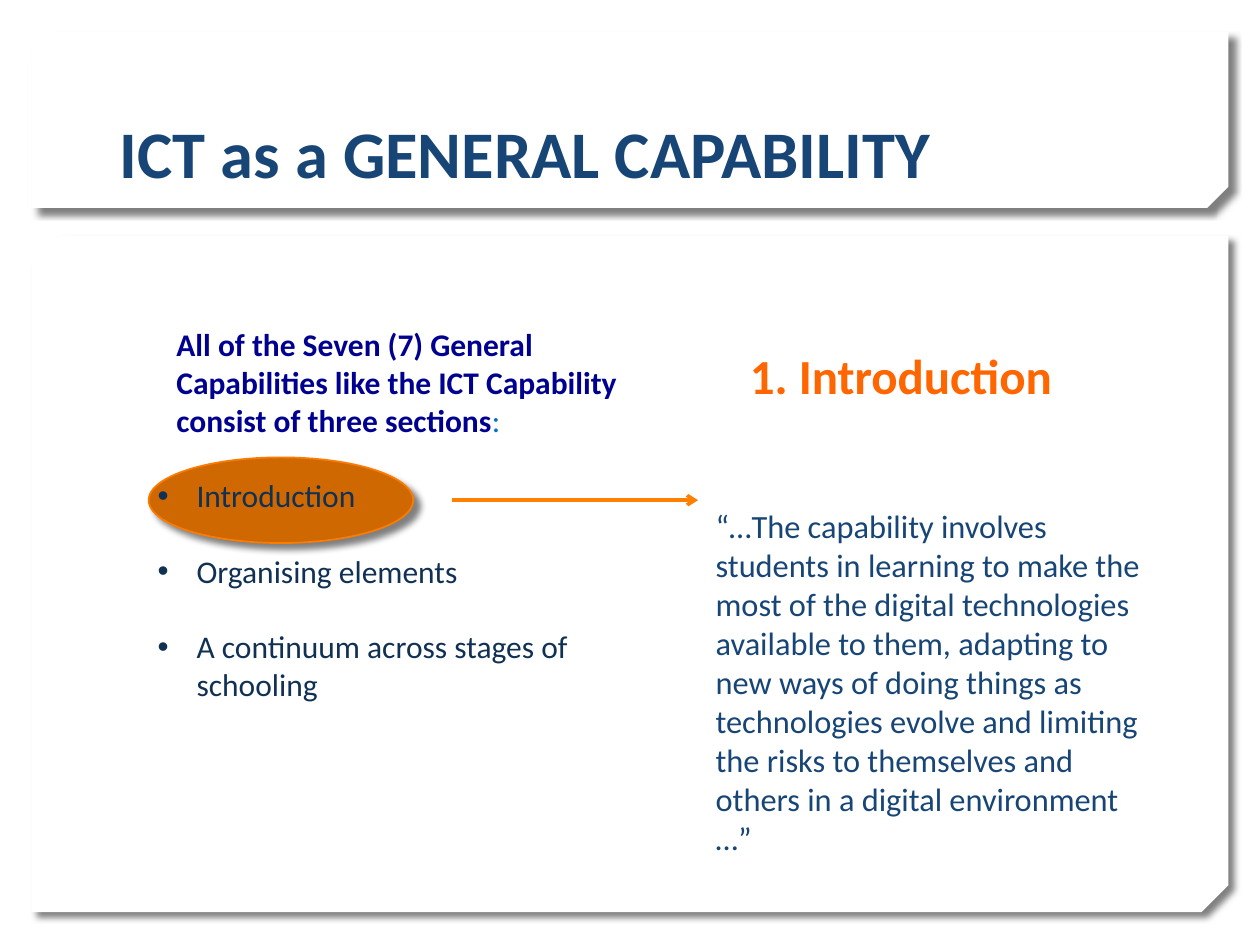
from dataclasses import dataclass

from lxml.etree import SubElement
from pptx import Presentation
from pptx.dml.color import RGBColor
from pptx.enum.shapes import MSO_CONNECTOR, MSO_SHAPE
from pptx.enum.text import MSO_ANCHOR, MSO_AUTO_SIZE, PP_ALIGN
from pptx.oxml import parse_xml
from pptx.oxml.ns import nsdecls, qn
from pptx.util import Inches, Pt


@dataclass(frozen=True)
class Theme:
    font: str = "Calibri"
    white: RGBColor = RGBColor(0xFF, 0xFF, 0xFF)
    blue: RGBColor = RGBColor(0x17, 0x45, 0x76)
    dark_blue: RGBColor = RGBColor(0x10, 0x31, 0x54)
    navy: RGBColor = RGBColor(0x00, 0x00, 0x90)
    light_blue: RGBColor = RGBColor(0x00, 0x70, 0xC0)
    heading_orange: RGBColor = RGBColor(0xFF, 0x66, 0x00)
    arrow_orange: RGBColor = RGBColor(0xFF, 0x7F, 0x01)
    oval_fill: RGBColor = RGBColor(0xD0, 0x68, 0x01)
    oval_line: RGBColor = RGBColor(0xFA, 0x7C, 0x00)
    title_size: Pt = Pt(38)
    heading_size: Pt = Pt(28)
    quote_size: Pt = Pt(18.5)
    list_size: Pt = Pt(18)


THEME = Theme()
SECTIONS = [
    "Introduction",
    "Organising elements",
    "A continuum across stages of schooling",
]
QUOTE = (
    "“…The capability involves students in learning to make the most of the "
    "digital technologies available to them, adapting to new ways of doing "
    "things as technologies evolve and limiting the risks to themselves and "
    "others in a digital environment …”"
)


def add_shadow(shape):
    shape.shadow.inherit = False
    shape._element.spPr.find(qn("a:effectLst")).append(parse_xml(
        f'<a:outerShdw {nsdecls("a")} blurRad="{Pt(4)}" dist="{Pt(5)}" '
        'dir="2700000" algn="tl" rotWithShape="0"><a:srgbClr val="000000">'
        '<a:alpha val="50000"/></a:srgbClr></a:outerShdw>'
    ))


def add_backdrop(slide, kind, box, fill, layer):
    """Add a shadowed shape behind the text, at the given layer from the back."""
    shape = slide.shapes.add_shape(kind, *map(Inches, box))
    shape.fill.solid()
    shape.fill.fore_color.rgb = fill
    shape.line.fill.background()
    add_shadow(shape)
    tree = slide.shapes._spTree
    tree.remove(shape._element)
    tree.insert(2 + layer, shape._element)  # two property elements come first
    return shape


def add_panel(slide, box, snip, layer):
    panel = add_backdrop(slide, MSO_SHAPE.SNIP_2_DIAG_RECTANGLE, box, THEME.white, layer)
    panel.adjustments[0] = snip
    panel.adjustments[1] = 0


def place_text(placeholder, box, anchor):
    placeholder.left, placeholder.top, placeholder.width, placeholder.height = map(Inches, box)
    frame = placeholder.text_frame
    frame.word_wrap = True
    frame.auto_size = MSO_AUTO_SIZE.NONE
    frame.vertical_anchor = anchor
    return frame


def format_paragraph(paragraph, size, color, bold=False, align=PP_ALIGN.LEFT):
    paragraph.alignment = align
    paragraph.space_before = Pt(0)
    paragraph.line_spacing = 1.0
    font = paragraph.font
    font.name, font.size, font.bold = THEME.font, size, bold
    font.color.rgb = color


def set_indent(paragraph, margin, first_line=0, bullet=None):
    properties = paragraph._p.get_or_add_pPr()
    properties.set("marL", str(Inches(margin)))
    properties.set("indent", str(Inches(first_line)))
    mark = SubElement(properties, qn("a:buChar" if bullet else "a:buNone"))
    if bullet:
        mark.set("char", bullet)
    # the bullet has to stand before the default run properties
    properties.find(qn("a:defRPr")).addprevious(mark)


def fill_title(placeholder, box):
    paragraph = place_text(placeholder, box, MSO_ANCHOR.BOTTOM).paragraphs[0]
    paragraph.text = "ICT as a GENERAL CAPABILITY"
    format_paragraph(paragraph, THEME.title_size, THEME.blue, bold=True)


def fill_heading(placeholder, box):
    paragraph = place_text(placeholder, box, MSO_ANCHOR.MIDDLE).paragraphs[0]
    paragraph.text = "1. Introduction"
    format_paragraph(paragraph, THEME.heading_size, THEME.heading_orange, True, PP_ALIGN.CENTER)


def fill_quote(placeholder, box):
    paragraph = place_text(placeholder, box, MSO_ANCHOR.TOP).paragraphs[0]
    paragraph.text = QUOTE
    format_paragraph(paragraph, THEME.quote_size, THEME.blue)
    set_indent(paragraph, 0.15)


def fill_sections(placeholder, box):
    frame = place_text(placeholder, box, MSO_ANCHOR.TOP)
    lead = frame.paragraphs[0]
    lead.text = (
        "All of the Seven (7) General Capabilities like the ICT Capability "
        "consist of three sections"
    )
    format_paragraph(lead, THEME.list_size, THEME.navy, bold=True)
    set_indent(lead, 0.15)
    colon = lead.add_run()
    colon.text = ":"
    colon.font.bold = False
    colon.font.color.rgb = THEME.light_blue
    for section in SECTIONS:
        paragraph = frame.add_paragraph()
        paragraph.text = section
        format_paragraph(paragraph, THEME.list_size, THEME.dark_blue)
        paragraph.space_before = Pt(21.6)
        set_indent(paragraph, 0.31, -0.31, "•")


def add_highlight(slide, box, layer):
    oval = add_backdrop(slide, MSO_SHAPE.OVAL, box, THEME.oval_fill, layer)
    oval.line.color.rgb = THEME.oval_line
    oval.line.width = Pt(1)


def add_arrow(slide, left, right, y):
    arrow = slide.shapes.add_connector(
        MSO_CONNECTOR.STRAIGHT, Inches(left), Inches(y), Inches(right), Inches(y)
    )
    arrow.line.color.rgb = THEME.arrow_orange
    arrow.line.width = Pt(2)
    SubElement(arrow.line._get_or_add_ln(), qn("a:tailEnd")).set("type", "arrow")
    SubElement(arrow._element.spPr, qn("a:effectLst"))


def build_capability_slide(presentation):
    slide = presentation.slides.add_slide(presentation.slide_layouts.get_by_name("Comparison"))
    parts = {part.placeholder_format.idx: part for part in slide.placeholders}
    fill_title(parts[0], (0.85, 0.32, 8.29, 1.25))
    fill_heading(parts[1], (5.15, 2.5, 4, 0.95))
    fill_sections(parts[2], (1.15, 2.53, 4, 3.74))
    fill_quote(parts[3], (5.43, 3.97, 3.72, 2.57))
    parts[4]._element.getparent().remove(parts[4]._element)

    add_panel(slide, (0.25, 1.87, 9.5, 5.37), 0.04, layer=0)
    add_panel(slide, (0.25, 0.25, 9.5, 1.4), 0.12, layer=1)
    add_highlight(slide, (1.18, 3.63, 2.1, 0.68), layer=2)
    add_arrow(slide, 3.59, 5.54, 3.97)


def main():
    presentation = Presentation()
    presentation.slide_width = Inches(10)
    presentation.slide_height = Inches(7.5)
    build_capability_slide(presentation)
    presentation.save("out.pptx")


if __name__ == "__main__":
    main()
